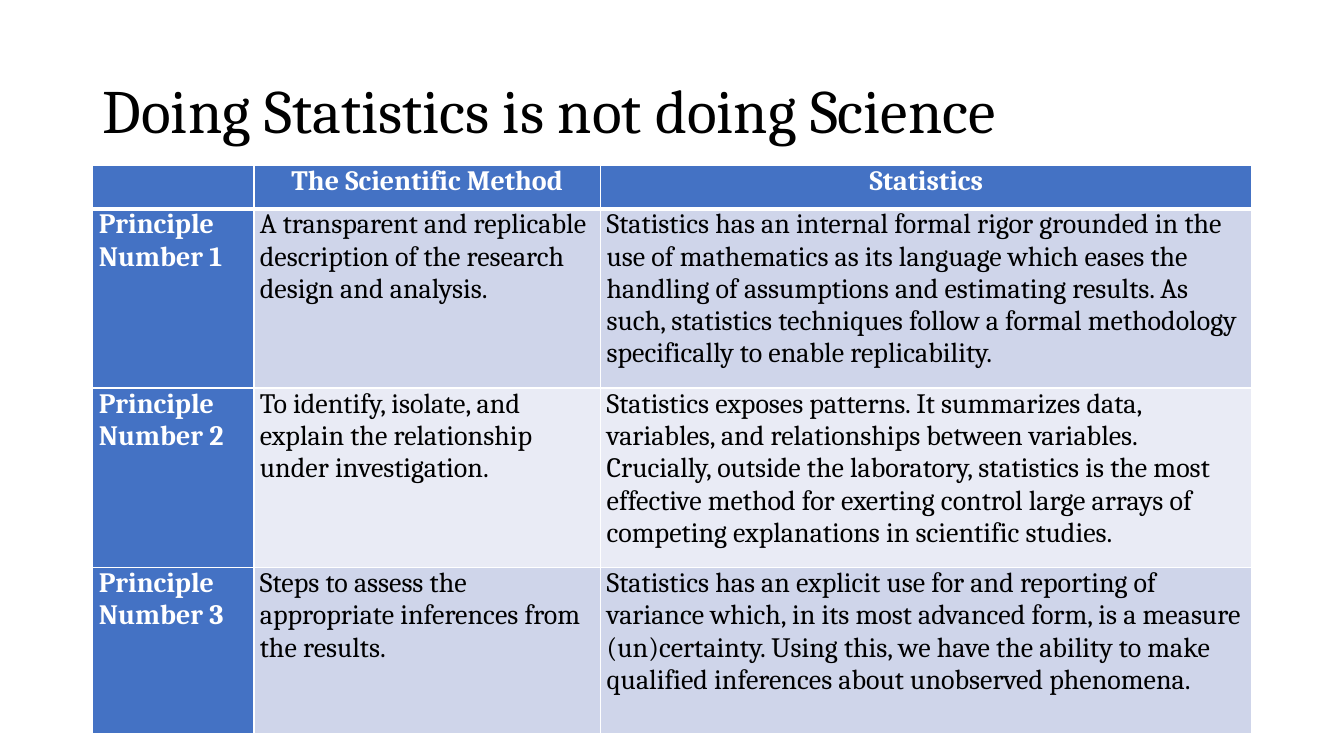
"""Build a slide that sets statistics beside the scientific method."""
from dataclasses import dataclass

from lxml.etree import fromstring
from pptx import Presentation
from pptx.dml.color import RGBColor as Rgb
from pptx.enum.text import MSO_ANCHOR as Anchor, PP_ALIGN as Align
from pptx.util import Cm, Pt

TITLE = "Doing Statistics is not doing Science"
HEADINGS = ("", "The Scientific Method", "Statistics")
PRINCIPLES = (
    (
        "Principle Number 1",
        "A transparent and replicable description of the research design and analysis.",
        "Statistics has an internal formal rigor grounded in the use of mathematics as its "
        "language which eases the handling of assumptions and estimating results. As such, "
        "statistics techniques follow a formal methodology specifically to enable replicability.",
    ),
    (
        "Principle Number 2",
        "To identify, isolate, and explain the relationship under investigation.",
        "Statistics exposes patterns. It summarizes data, variables, and relationships between "
        "variables. Crucially, outside the laboratory, statistics is the most effective method "
        "for exerting control large arrays of competing explanations in scientific studies.",
    ),
    (
        "Principle Number 3",
        "Steps to assess the appropriate inferences from the results.",
        "Statistics has an explicit use for and reporting of variance which, in its most advanced "
        "form, is a measure (un)certainty. Using this, we have the ability to make qualified "
        "inferences about unobserved phenomena.",
    ),
)
COLUMN_WIDTHS = (4.06, 8.74, 16.41)
ROW_HEIGHTS = (1.09, 4.52, 4.52, 4.19)
LEFT = 2.34
TITLE_TOP, TITLE_HEIGHT = 1.02, 3.68
TABLE_TOP = 4.17
CELL_MARGIN = 0.15
DRAWING = "http://schemas.openxmlformats.org/drawingml/2006/main"


@dataclass(frozen=True)
class Theme:
    """Colours, font and sizes of the slide."""

    font: str = "Cambria"
    title_size: int = 44
    table_size: int = 20
    ink: str = "000000"
    light: str = "FFFFFF"
    accent: str = "4472C4"
    bands: tuple = ("CFD5EA", "E9EBF5")
    rule: int = 1
    header_rule: int = 3


THEME = Theme()


def add_span(para, text, size, color, bold=False):
    """Add one formatted run to a paragraph."""
    span = para.add_run()
    span.text = text
    span.font.name = THEME.font
    span.font.size = Pt(size)
    span.font.bold = bold
    span.font.color.rgb = Rgb.from_string(color)


def set_borders(cell, top, bottom):
    """Give a cell its four borders, with widths in points."""
    properties = cell._tc.get_or_add_tcPr()
    widths = {"L": THEME.rule, "R": THEME.rule, "T": top, "B": bottom}
    for position, (side, width) in enumerate(widths.items()):
        line = fromstring(
            f'<a:ln{side} xmlns:a="{DRAWING}" w="{Pt(width)}"><a:solidFill>'
            f'<a:srgbClr val="{THEME.light}"/></a:solidFill></a:ln{side}>'
        )
        properties.insert(position, line)


def fill_cell(cell, text, row, column):
    """Format a table cell by its row and column, and write its text."""
    is_label = row == 0 or column == 0
    cell.fill.solid()
    color = THEME.accent if is_label else THEME.bands[(row - 1) % 2]
    cell.fill.fore_color.rgb = Rgb.from_string(color)
    cell.margin_left = cell.margin_right = Cm(CELL_MARGIN)
    cell.margin_top = cell.margin_bottom = 0
    set_borders(
        cell,
        THEME.header_rule if row == 1 else THEME.rule,
        THEME.header_rule if row == 0 else THEME.rule,
    )
    if text:
        para = cell.text_frame.paragraphs[0]
        para.alignment = Align.CENTER if row == 0 else Align.JUSTIFY if column == 0 else Align.LEFT
        add_span(para, text, THEME.table_size, THEME.light if is_label else THEME.ink, is_label)


def add_title(page):
    """Place and write the title."""
    box = page.shapes.title
    box.left, box.top = Cm(LEFT), Cm(TITLE_TOP)
    box.width, box.height = Cm(sum(COLUMN_WIDTHS)), Cm(TITLE_HEIGHT)
    box.text_frame.vertical_anchor = Anchor.MIDDLE
    para = box.text_frame.paragraphs[0]
    para.alignment = Align.LEFT
    para.line_spacing = 0.9
    add_span(para, TITLE, THEME.title_size, THEME.ink)


def add_comparison(page):
    """Add the table of principles."""
    table = page.shapes.add_table(
        len(ROW_HEIGHTS), len(COLUMN_WIDTHS), Cm(LEFT), Cm(TABLE_TOP),
        Cm(sum(COLUMN_WIDTHS)), Cm(sum(ROW_HEIGHTS)),
    ).table
    table.first_col = True
    for column, width in zip(table.columns, COLUMN_WIDTHS):
        column.width = Cm(width)
    for row, height in zip(table.rows, ROW_HEIGHTS):
        row.height = Cm(height)
    for row, texts in enumerate((HEADINGS, *PRINCIPLES)):
        for column, text in enumerate(texts):
            fill_cell(table.cell(row, column), text, row, column)


def main():
    """Build and save the deck."""
    deck = Presentation()
    deck.slide_width, deck.slide_height = Cm(33.87), Cm(19.05)
    page = deck.slides.add_slide(deck.slide_layouts.get_by_name("Title Only"))
    add_title(page)
    add_comparison(page)
    deck.save("out.pptx")


if __name__ == "__main__":
    main()
